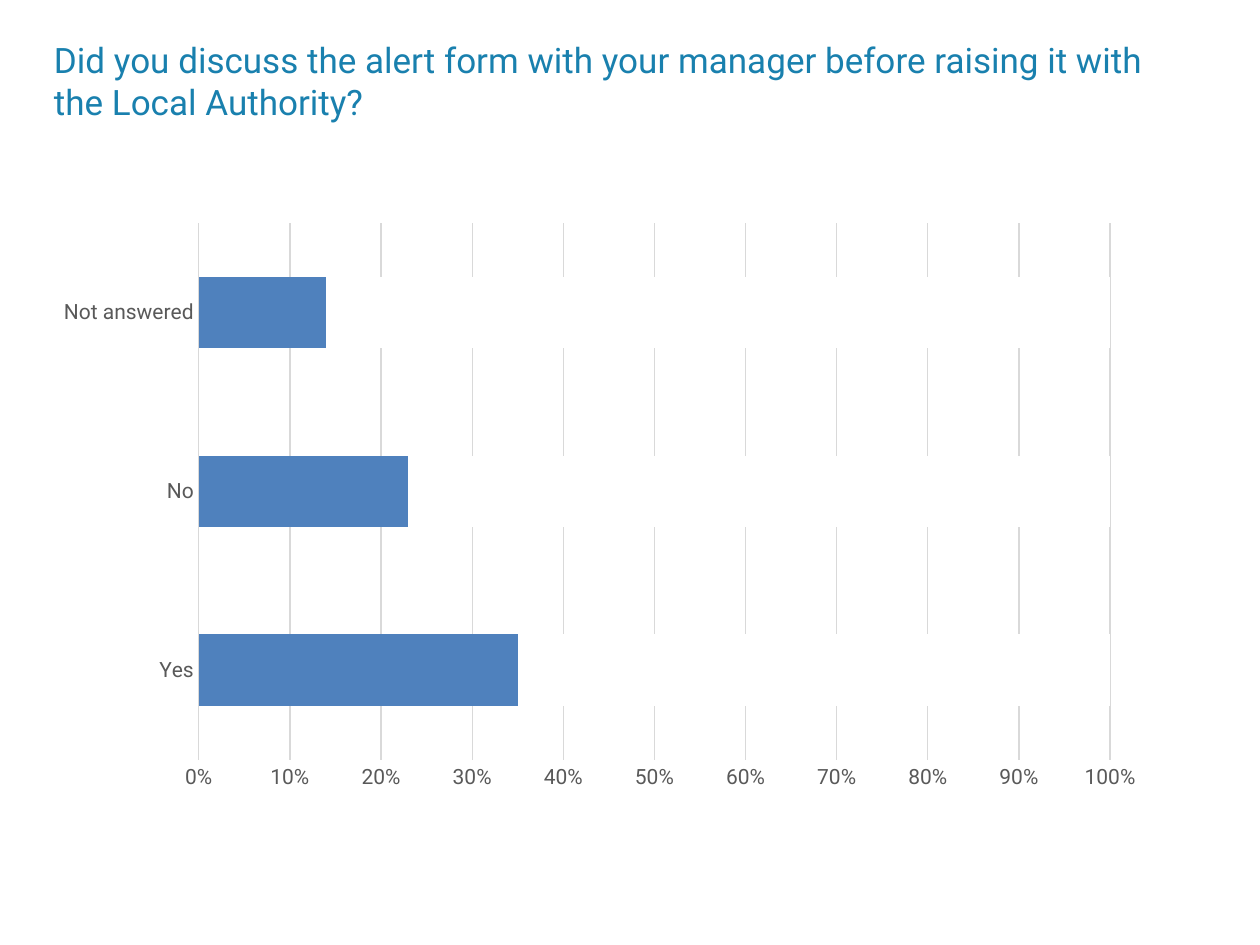
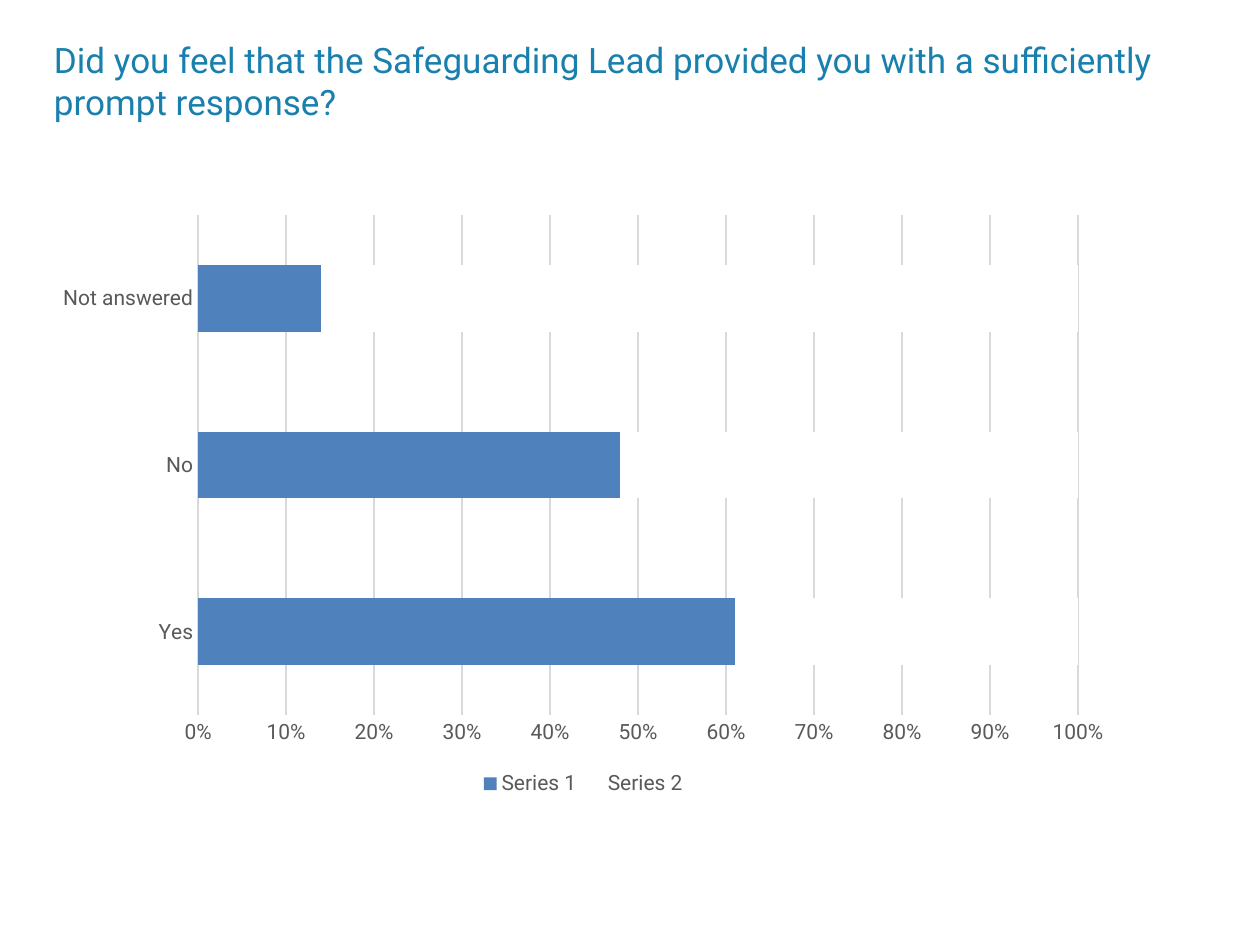
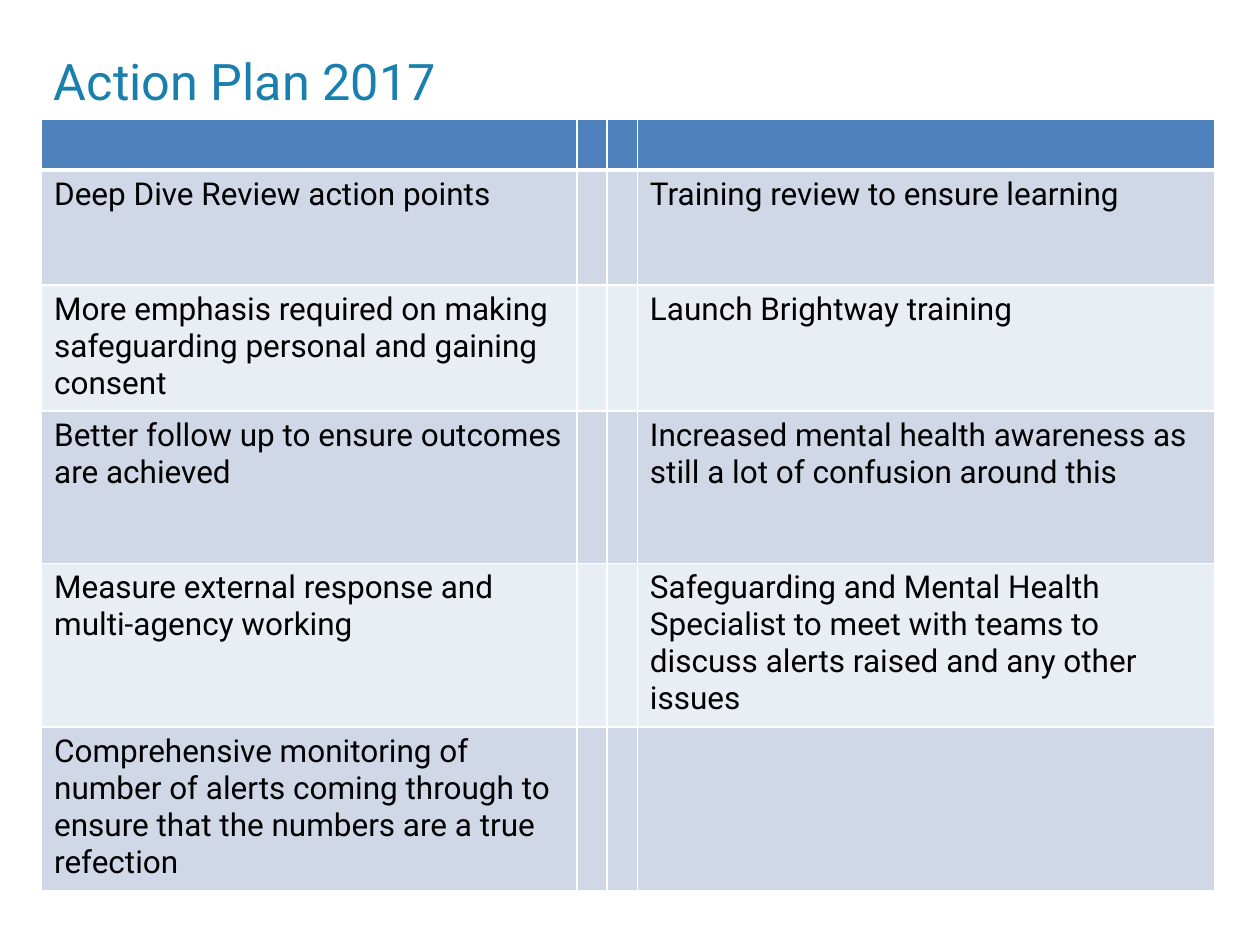
"""Build three safeguarding review slides: two survey charts and an action plan."""
from lxml.etree import SubElement
from pptx import Presentation
from pptx.chart.data import CategoryChartData
from pptx.dml.color import RGBColor
from pptx.enum.chart import XL_CHART_TYPE, XL_LEGEND_POSITION, XL_TICK_MARK
from pptx.enum.text import MSO_ANCHOR
from pptx.oxml.ns import qn
from pptx.util import Inches, Pt

FONT = "Roboto"
TEAL = RGBColor(0x19, 0x80, 0xAE)
BLUE = RGBColor(0x4F, 0x81, 0xBD)
WHITE = RGBColor(0xFF, 0xFF, 0xFF)
BLACK = RGBColor(0x00, 0x00, 0x00)
GREY = RGBColor(0x59, 0x59, 0x59)
GRID = RGBColor(0xD9, 0xD9, 0xD9)
BAND_DARK = RGBColor(0xD0, 0xD8, 0xE8)
BAND_LIGHT = RGBColor(0xE9, 0xED, 0xF4)

LEFT = 0.33
ANSWERS = ["Yes", "No", "Not answered"]
SURVEYS = [
    {
        "title": "Did you discuss the alert form with your manager before raising it "
                 "with the Local Authority?",
        "shares": [35, 23, 14],
        "at": (LEFT, 1.68, 8.86, 4.68),
        "legend": False,
    },
    {
        "title": "Did you feel that the Safeguarding Lead provided you with a "
                 "sufficiently prompt response?",
        "shares": [61, 48, 14],
        "at": (LEFT, 1.61, 8.6, 4.75),
        "legend": True,
    },
]
PLAN_TITLE = "Action Plan 2017"
PLAN = [
    ("", ""),
    ("Deep Dive Review action points", "Training review to ensure learning"),
    ("More emphasis required on making safeguarding personal and gaining consent",
     "Launch Brightway training"),
    ("Better follow up to ensure outcomes are achieved",
     "Increased mental health awareness as still a lot of confusion around this"),
    ("Measure external response and multi-agency working",
     "Safeguarding and Mental Health Specialist to meet with teams to discuss "
     "alerts raised and any other issues"),
    ("Comprehensive monitoring of number of alerts coming through to ensure that "
     "the numbers are a true refection", ""),
]
COL_WIDTHS = [4.25, 0.23, 0.23, 4.58]
ROW_HEIGHTS = [0.38, 0.91, 0.98, 1.21, 1.27, 1.27]


def set_font(font, size, color):
    for name, value in {"name": FONT, "size": Pt(size)}.items():
        setattr(font, name, value)
    font.color.rgb = color


def set_line(line, color):
    line.color.rgb = color
    line.width = Pt(0.75)


def add_slide(prs, title, size):
    s = prs.slides.add_slide(prs.slide_layouts[6])
    tf = s.shapes.add_textbox(*map(Inches, (LEFT, 0.33, 9, 0.62))).text_frame
    tf.word_wrap = True
    tf.vertical_anchor = MSO_ANCHOR.MIDDLE
    r = tf.paragraphs[0].add_run()
    r.text = title
    set_font(r.font, size, TEAL)
    return s


def add_survey(prs, survey):
    s = add_slide(prs, survey["title"], 20)
    data = CategoryChartData()
    data.categories = ANSWERS
    data.add_series("Series 1", survey["shares"])
    data.add_series("Series 2", [100 - share for share in survey["shares"]])
    chart = s.shapes.add_chart(
        XL_CHART_TYPE.BAR_STACKED_100, *map(Inches, survey["at"]), data).chart
    set_font(chart.font, 10, BLACK)
    chart.has_title = False

    plot = chart.plots[0]
    for name, value in {"gap_width": 150, "overlap": 100,
                        "vary_by_categories": False}.items():
        setattr(plot, name, value)
    for series, color in zip(plot.series, (BLUE, WHITE)):
        series.format.fill.solid()
        series.format.fill.fore_color.rgb = color

    cat, val = chart.category_axis, chart.value_axis
    for axis in (cat, val):
        axis.major_tick_mark = axis.minor_tick_mark = XL_TICK_MARK.NONE
        set_font(axis.tick_labels.font, 12, GREY)
    set_line(cat.format.line, GRID)
    val.format.line.fill.background()
    for name, value in {"minimum_scale": 0, "maximum_scale": 1, "major_unit": 0.1,
                        "has_major_gridlines": True}.items():
        setattr(val, name, value)
    set_line(val.major_gridlines.format.line, GRID)
    val.tick_labels.number_format = "0%"
    val.tick_labels.number_format_is_linked = False

    chart.has_legend = survey["legend"]
    if survey["legend"]:
        chart.legend.position = XL_LEGEND_POSITION.BOTTOM
        chart.legend.include_in_layout = False
        set_font(chart.legend.font, 12, GREY)


def set_borders(cell, bottom):
    tc_pr = cell._tc.get_or_add_tcPr()
    for side, width in {"L": 1, "R": 1, "T": 1, "B": bottom}.items():
        ln = SubElement(tc_pr, qn(f"a:ln{side}"), w=str(Pt(width)))
        fill = SubElement(ln, qn("a:solidFill"))
        SubElement(fill, qn("a:srgbClr"), val=str(WHITE))


def add_plan(prs):
    s = add_slide(prs, PLAN_TITLE, 28.8)
    table = s.shapes.add_table(
        len(PLAN), len(COL_WIDTHS), Inches(LEFT), Inches(0.95),
        Inches(sum(COL_WIDTHS)), Inches(sum(ROW_HEIGHTS))).table
    for col, width in zip(table.columns, COL_WIDTHS):
        col.width = Inches(width)
    for i, (left, right) in enumerate(PLAN):
        table.rows[i].height = Inches(ROW_HEIGHTS[i])
        color = BLUE if i == 0 else BAND_DARK if i % 2 else BAND_LIGHT
        for j, text in enumerate((left, "", "", right)):
            cell = table.cell(i, j)
            set_borders(cell, 3 if i == 0 else 1)
            cell.fill.solid()
            cell.fill.fore_color.rgb = color
            if text:
                r = cell.text_frame.paragraphs[0].add_run()
                r.text = text
                set_font(r.font, 18, BLACK)


def main():
    prs = Presentation()
    prs.slide_width, prs.slide_height = Inches(10), Inches(7.5)
    for survey in SURVEYS:
        add_survey(prs, survey)
    add_plan(prs)
    prs.save("out.pptx")


if __name__ == "__main__":
    main()
